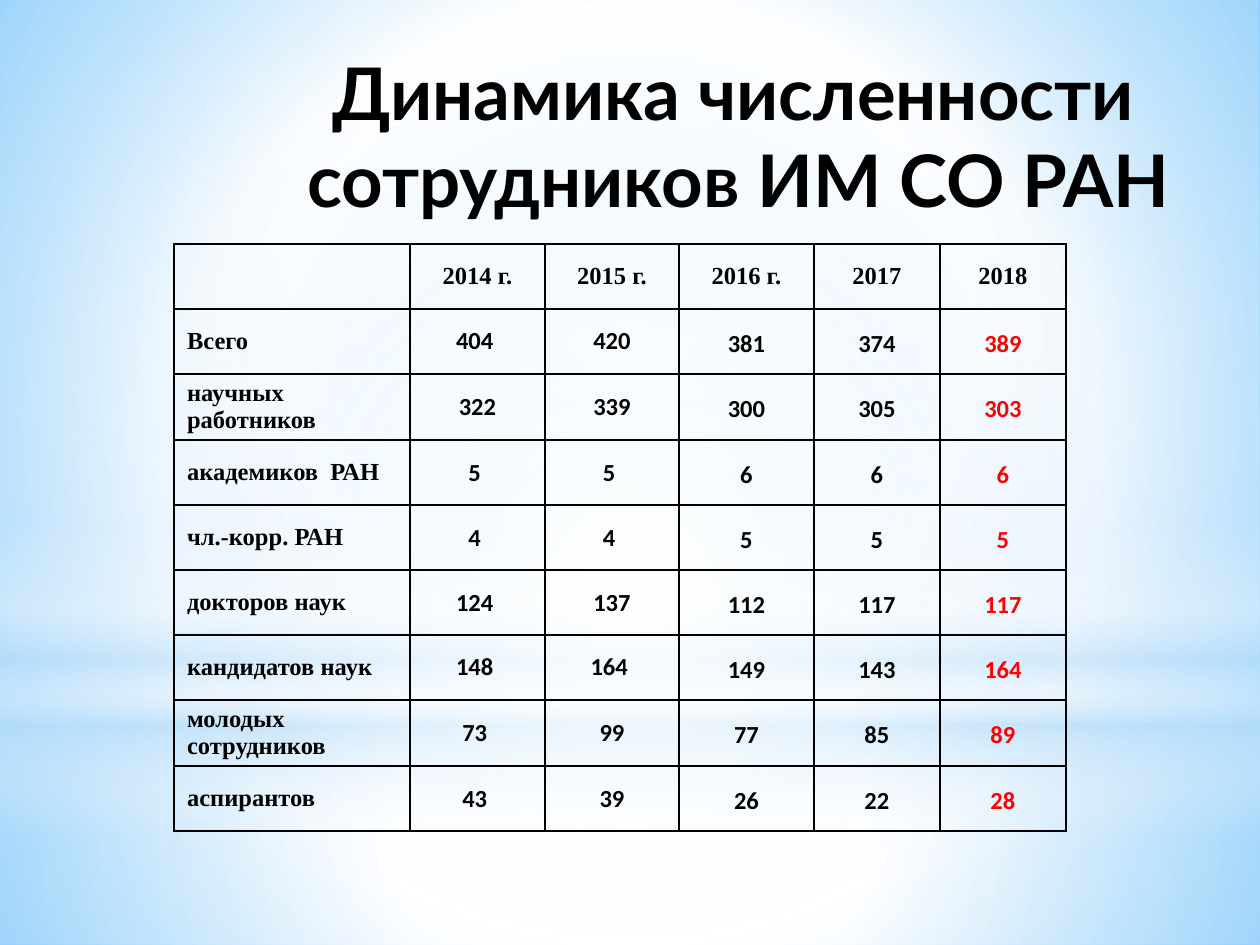
from dataclasses import dataclass

from lxml import etree
from pptx import Presentation
from pptx import util as u
from pptx.dml.color import RGBColor
from pptx.enum import shapes, text
from pptx.oxml import parse_xml
from pptx.oxml.ns import nsdecls, qn

EMU_PER_PX = 914400 / 126


@dataclass(frozen=True)
class Theme:
    black: str = "000000"
    red: str = "FF0000"
    white: str = "FFFFFF"
    sky: str = "B4DCFA"
    center_blue: str = "99D4FE"
    edge_blue: str = "54BDFF"
    title_font: str = "Lato"
    label_font: str = "Times New Roman"
    number_font: str = "Calibri"
    title_size: float = 41.4
    table_size: float = 14
    border_width: float = 1


THEME = Theme()

TITLE = "Динамика численности   сотрудников ИМ СО РАН"
COLUMNS = [236, 135, 134, 135, 126, 126]
ROW_HEIGHT = 65
STAFF = [
    ["", "2014 г.", "2015 г.", "2016 г.", "2017", "2018"],
    ["Всего", "404 ", "420", "381", "374", "389"],
    ["научных работников", "322", "339", "300", "305", "303"],
    ["академиков  РАН", "5 ", "5 ", "6", "6", "6"],
    ["чл.-корр. РАН", "4 ", "4 ", "5", "5", "5"],
    ["докторов наук", "124 ", "137", "112", "117", "117"],
    ["кандидатов наук", "148 ", "164 ", "149", "143", "164"],
    ["молодых сотрудников", "73 ", "99", "77", "85", "89"],
    ["аспирантов", "43 ", "39", "26", "22", "28"],
]

# Gradient stops: position %, colour, opacity %
BACKGROUND = [(0, THEME.center_blue, 100), (60, THEME.white, 100),
              (100, THEME.edge_blue, 100)]
LOWER = [(0, THEME.white, 90), (37, THEME.white, 75), (100, THEME.sky, 78)]
UPPER = [(0, THEME.white, 88), (48, THEME.white, 61), (100, THEME.sky, 78)]
HORIZON = [(0, THEME.white, 0), (29, THEME.white, 29), (45, THEME.sky, 40),
           (55, THEME.white, 25), (65, THEME.sky, 60), (100, THEME.white, 0)]
GLOW = [(0, THEME.white, 100), (56, THEME.white, 0), (100, THEME.white, 0)]


def px(length):
    return u.Emu(round(length * EMU_PER_PX))


def set_all(target, values):
    for name, value in values.items():
        setattr(target, name, value)


def fill_gradient(fill, element, stops, angle=None):
    """Give a radial gradient, or a linear one when an angle is set."""
    fill.gradient()
    gradient = element.find(".//" + qn("a:gradFill"))
    for child in list(gradient):
        gradient.remove(child)
    stop_list = etree.SubElement(gradient, qn("a:gsLst"))
    for position, color, opacity in stops:
        stop = etree.SubElement(stop_list, qn("a:gs"), pos=str(position * 1000))
        shade = etree.SubElement(stop, qn("a:srgbClr"), val=color)
        etree.SubElement(shade, qn("a:alpha"), val=str(opacity * 1000))
    if angle is None:
        direction = etree.SubElement(gradient, qn("a:path"), path="circle")
        center = dict.fromkeys("ltrb", "50000")
        etree.SubElement(direction, qn("a:fillToRect"), **center)
    else:
        etree.SubElement(gradient, qn("a:lin"), ang=str(angle * 60000), scaled="0")


def add_light(slide, kind, top, height, stops, angle=None):
    """Add a full-width band or ellipse of soft light."""
    shape = slide.shapes.add_shape(kind, 0, px(top), px(1260), px(height))
    shape.shadow.inherit = False
    shape.line.fill.background()
    fill_gradient(shape.fill, shape.element, stops, angle)


def add_backdrop(slide):
    fill_gradient(slide.background.fill, slide.element, BACKGROUND)
    rectangle, oval = shapes.MSO_SHAPE.RECTANGLE, shapes.MSO_SHAPE.OVAL
    add_light(slide, rectangle, 703, 242, LOWER)
    add_light(slide, rectangle, 0, 703, UPPER)
    add_light(slide, rectangle, 519, 315, HORIZON, 90)
    add_light(slide, oval, 221, 703, GLOW)


def format_text(paragraph, font, size, color, alignment, spacing=None):
    set_all(paragraph, {"alignment": alignment, "line_spacing": spacing})
    set_all(paragraph.font, {"name": font, "size": u.Pt(size), "bold": True})
    paragraph.font.color.rgb = RGBColor.from_string(color)


def place_title(slide):
    title = slide.shapes.title
    title.element.getparent().append(title.element)  # in front of the backdrop
    set_all(title, {"left": px(79), "top": px(42),
                    "width": px(1103), "height": px(168)})
    set_all(title.text_frame, {
        "text": TITLE, "word_wrap": True,
        "auto_size": text.MSO_AUTO_SIZE.NONE,
        "vertical_anchor": text.MSO_ANCHOR.TOP,
    })
    format_text(title.text_frame.paragraphs[0], THEME.title_font,
                THEME.title_size, THEME.black, text.PP_ALIGN.RIGHT)


def add_borders(cell):
    properties = cell._tc.get_or_add_tcPr()
    for index, side in enumerate("LRTB"):
        properties.insert(index, parse_xml(
            f'<a:ln{side} {nsdecls("a")} w="{u.Pt(THEME.border_width)}">'
            f'<a:solidFill><a:srgbClr val="{THEME.black}"/></a:solidFill>'
            f'</a:ln{side}>'))


def format_cell(cell, row, column):
    horizontal, vertical = (13, 6) if column < 2 else (0, 0)
    set_all(cell, {
        "text": STAFF[row][column],
        "vertical_anchor": text.MSO_ANCHOR.MIDDLE,
        "margin_left": px(horizontal), "margin_right": px(horizontal),
        "margin_top": px(vertical), "margin_bottom": px(vertical),
    })
    cell.fill.background()
    add_borders(cell)
    is_number = row > 0 and column > 0
    format_text(
        cell.text_frame.paragraphs[0],
        THEME.number_font if is_number else THEME.label_font,
        THEME.table_size,
        THEME.red if is_number and column == len(COLUMNS) - 1 else THEME.black,
        text.PP_ALIGN.CENTER if column else text.PP_ALIGN.LEFT,
        1.15 if is_number and column > 2 else None,
    )


def add_staff_table(slide):
    table = slide.shapes.add_table(
        len(STAFF), len(COLUMNS), px(174), px(244),
        px(sum(COLUMNS)), px(ROW_HEIGHT * len(STAFF))).table
    set_all(table, {"first_row": False, "horz_banding": False})
    for column, width in zip(table.columns, COLUMNS):
        column.width = px(width)
    for row_index, row in enumerate(table.rows):
        row.height = px(ROW_HEIGHT)
        for column_index, cell in enumerate(row.cells):
            format_cell(cell, row_index, column_index)


def main():
    presentation = Presentation()
    set_all(presentation, {"slide_width": px(1260), "slide_height": px(945)})
    slide = presentation.slides.add_slide(presentation.slide_layouts[5])
    add_backdrop(slide)
    place_title(slide)
    add_staff_table(slide)
    presentation.save("out.pptx")


if __name__ == "__main__":
    main()
